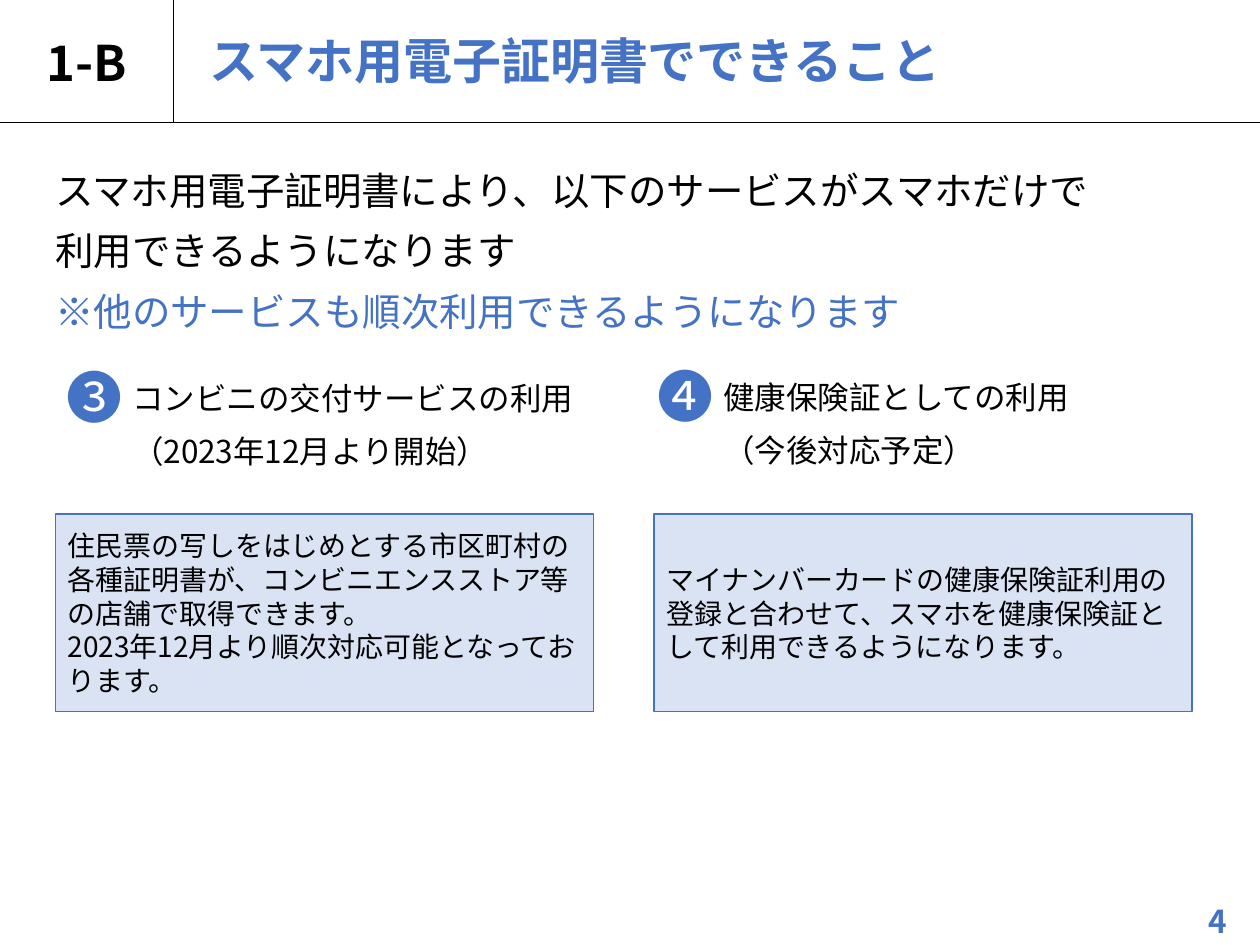
from dataclasses import dataclass

import pptx
import pptx.dml.color
import pptx.enum.shapes
import pptx.enum.text
import pptx.oxml.ns
import pptx.util
from lxml import etree

Inches = pptx.util.Inches
Pt = pptx.util.Pt
RGBColor = pptx.dml.color.RGBColor
MSO_SHAPE = pptx.enum.shapes.MSO_SHAPE
MSO_ANCHOR = pptx.enum.text.MSO_ANCHOR
PP_ALIGN = pptx.enum.text.PP_ALIGN
qn = pptx.oxml.ns.qn

BLACK = RGBColor(0x00, 0x00, 0x00)
BLUE = RGBColor(0x44, 0x72, 0xC4)
PALE_BLUE = RGBColor(0xDA, 0xE3, 0xF3)
FONT = "Noto Sans CJK JP"

HEADER_HEIGHT = 0.97
SECTION_WIDTH = 1.38


@dataclass(frozen=True)
class Service:
    left: float
    top: float
    number: str
    heading: tuple[str, ...]
    details: tuple[str, ...]


SERVICES = (
    Service(
        0.44, 2.84, "❸",
        ("コンビニの交付サービスの利用（2023年12月より開始）",),
        (
            "住民票の写しをはじめとする市区町村の各種証明書が、コンビニエンスストア等の店舗で取得できます。",
            "2023年12月より順次対応可能となっております。",
        ),
    ),
    Service(
        5.19, 2.83, "❹",
        ("健康保険証としての利用", "（今後対応予定）"),
        ("マイナンバーカードの健康保険証利用の登録と合わせて、スマホを健康保険証として利用できるようになります。",),
    ),
)


def write_text(shape, *lines: str, size: float, color: RGBColor = BLACK,
               bold: bool = False, align=PP_ALIGN.LEFT,
               anchor=MSO_ANCHOR.TOP, spacing: float = 1.0) -> None:
    frame = shape.text_frame
    frame.word_wrap = True
    frame.vertical_anchor = anchor
    for index, line in enumerate(lines):
        paragraph = frame.paragraphs[0] if index == 0 else frame.add_paragraph()
        paragraph.alignment = align
        paragraph.line_spacing = spacing
        run = paragraph.add_run()
        run.text = line
        run.font.name = FONT
        run.font.size = Pt(size)
        run.font.bold = bold
        run.font.color.rgb = color
        east_asian = etree.SubElement(run.font._element, qn("a:ea"))
        east_asian.set("typeface", FONT)


def add_box(slide, left: float, top: float, width: float, height: float):
    return slide.shapes.add_textbox(
        Inches(left), Inches(top), Inches(width), Inches(height))


def add_panel(slide, kind, left: float, top: float, width: float, height: float):
    shape = slide.shapes.add_shape(
        kind, Inches(left), Inches(top), Inches(width), Inches(height))
    shape.shadow.inherit = False
    return shape


def add_rule(slide, start_x: float, start_y: float, end_x: float, end_y: float) -> None:
    connector = slide.shapes.add_connector(
        pptx.enum.shapes.MSO_CONNECTOR.STRAIGHT,
        Inches(start_x), Inches(start_y), Inches(end_x), Inches(end_y))
    connector.line.color.rgb = BLACK
    connector.line.width = Pt(0.5)
    etree.SubElement(connector._element.spPr, qn("a:effectLst"))


def add_header(slide) -> None:
    add_rule(slide, 0, HEADER_HEIGHT, 10, HEADER_HEIGHT)
    add_rule(slide, SECTION_WIDTH, HEADER_HEIGHT, SECTION_WIDTH, 0)
    section = add_box(slide, 0, 0, SECTION_WIDTH, 0.98)
    write_text(section, "1-B", size=28, bold=True,
               align=PP_ALIGN.CENTER, anchor=MSO_ANCHOR.MIDDLE)
    title = add_panel(slide, MSO_SHAPE.ROUNDED_RECTANGLE, 1.53, 0.16, 8.19, 0.63)
    title.fill.background()
    title.line.fill.background()
    write_text(title, "スマホ用電子証明書でできること", size=28, color=BLUE,
               bold=True, anchor=MSO_ANCHOR.MIDDLE)


def add_introduction(slide) -> None:
    introduction = add_box(slide, 0.34, 1.17, 9.33, 1.21)
    write_text(introduction,
               "スマホ用電子証明書により、以下のサービスがスマホだけで",
               "利用できるようになります",
               "※他のサービスも順次利用できるようになります",
               size=22, spacing=1.3)
    note = introduction.text_frame.paragraphs[-1].runs[0]
    note.font.color.rgb = BLUE


def add_service(slide, service: Service) -> None:
    panel = add_panel(slide, MSO_SHAPE.RECTANGLE, service.left, 4.08, 4.27, 1.57)
    panel.fill.solid()
    panel.fill.fore_color.rgb = PALE_BLUE
    panel.line.color.rgb = BLUE
    panel.line.width = Pt(0.75)
    write_text(panel, *service.details, size=16, anchor=MSO_ANCHOR.MIDDLE)

    heading_left = service.left + (0.51 if service.left < 5 else 0.45)
    number = add_box(slide, heading_left - 0.52, service.top + 0.05, 0.65, 0.7)
    write_text(number, service.number, size=32, color=BLUE, spacing=0.9)
    heading = add_box(slide, heading_left, service.top, 3.86, 1.15)
    write_text(heading, *service.heading, size=18, spacing=1.4)


def main() -> None:
    presentation = pptx.Presentation()
    presentation.slide_width = Inches(10)
    presentation.slide_height = Inches(7.5)
    slide = presentation.slides.add_slide(presentation.slide_layouts[6])
    add_header(slide)
    add_introduction(slide)
    for service in SERVICES:
        add_service(slide, service)
    page_number = add_box(slide, 9.35, 7.11, 0.63, 0.39)
    write_text(page_number, "4", size=18, color=BLUE, bold=True,
               align=PP_ALIGN.CENTER, anchor=MSO_ANCHOR.MIDDLE)
    presentation.save("out.pptx")


if __name__ == "__main__":
    main()
